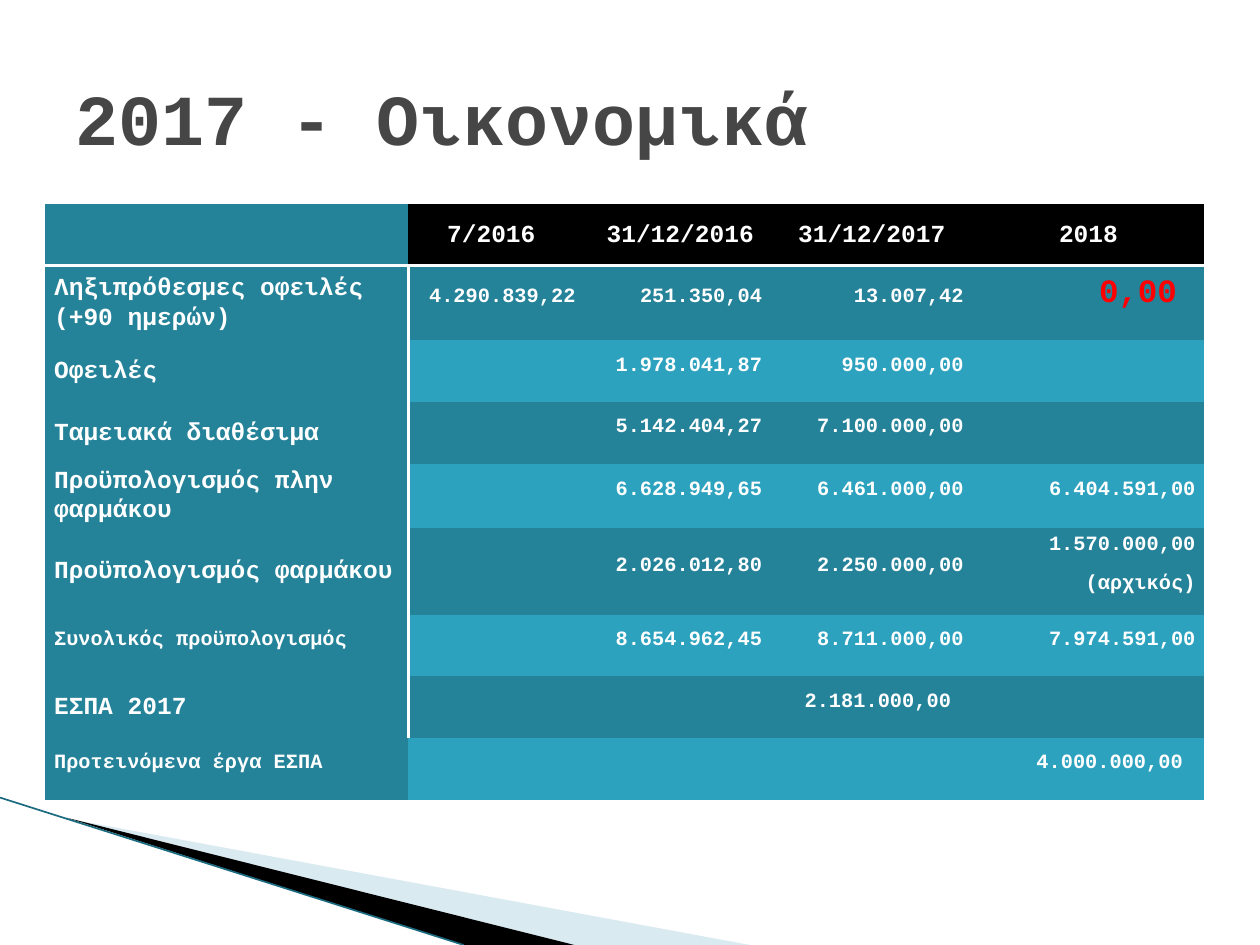
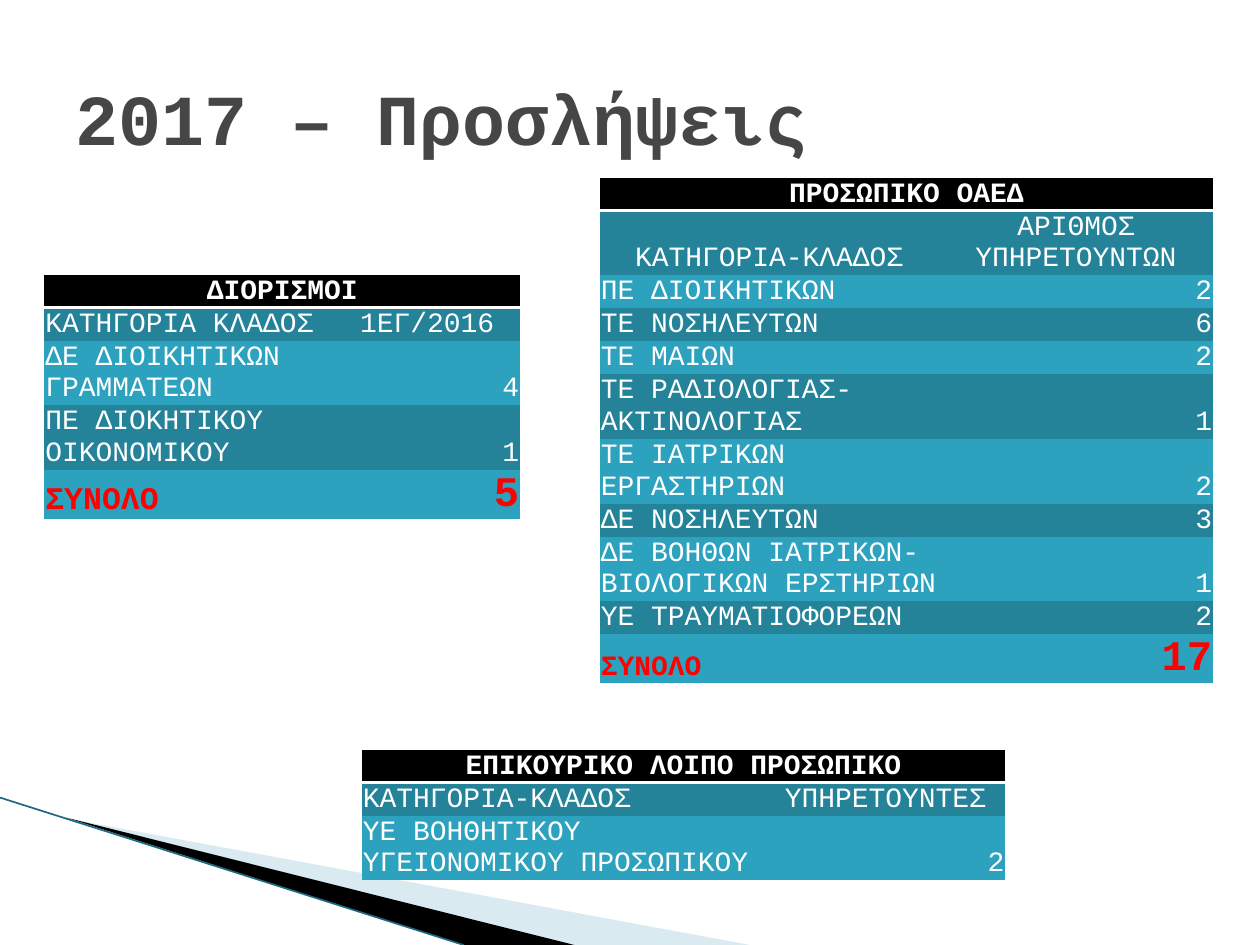
from dataclasses import dataclass

from lxml.etree import SubElement
from pptx import Presentation
from pptx.dml.color import RGBColor
from pptx.enum.text import MSO_ANCHOR as Anchor, MSO_AUTO_SIZE as AutoSize, PP_ALIGN as Align
from pptx.enum.shapes import MSO_CONNECTOR as Connector
from pptx.oxml.ns import qn
from pptx.util import Inches, Pt


@dataclass(frozen=True)
class Theme:
    font: str = "Courier New"
    white: str = "FFFFFF"
    black: str = "000000"
    red: str = "FF0000"
    title: str = "464646"
    dark: str = "248299"
    light: str = "2DA2BF"
    pale: str = "A0CBDC"
    edge: str = "1B6B80"
    title_size: int = 41
    label_size: int = 14
    raised_size: int = 20
    zero_size: int = 32
    staff_size: int = 16
    total_size: int = 24


THEME = Theme()
TITLE_BOX = (0.5, 0.3, 9, 1.25)
NO_GRID_STYLE = "{2D5ABB26-0587-4C30-8999-92F81FD0307C}"

FINANCE_HEADS = ["7/2016", "31/12/2016", "31/12/2017", "2018"]
# label, whether the label is raised, row height, one amount per date
FINANCE_ROWS = [
    ("Ληξιπρόθεσμες οφειλές\n(+90 ημερών)", False, 0.59,
     ["4.290.839,22", "251.350,04", "13.007,42", "0,00"]),
    ("Οφειλές", False, 0.49, ["", "1.978.041,87", "950.000,00", ""]),
    ("Ταμειακά διαθέσιμα", False, 0.49, ["", "5.142.404,27", "7.100.000,00", ""]),
    ("Προϋπολογισμός πλην φαρμάκου", False, 0.51,
     ["", "6.628.949,65", "6.461.000,00", "6.404.591,00"]),
    ("Προϋπολογισμός φαρμάκου", False, 0.69,
     ["", "2.026.012,80", "2.250.000,00", "1.570.000,00\n(αρχικός)"]),
    ("Συνολικός προϋπολογισμός", True, 0.49,
     ["", "8.654.962,45", "8.711.000,00", "7.974.591,00"]),
    ("ΕΣΠΑ 2017", False, 0.49, ["", "", "2.181.000,00", ""]),
    ("Προτεινόμενα έργα ΕΣΠΑ", True, 0.49, ["", "", "", "4.000.000,00"]),
]
# amounts set slightly in from the right edge, with that margin
INDENTED = {"4.290.839,22": 0.11, "0,00": 0.22, "2.181.000,00": 0.17, "4.000.000,00": 0.17}

# label, count, lines of text
APPOINTMENTS = [
    ("ΔΕ ΔΙΟΙΚΗΤΙΚΩΝ ΓΡΑΜΜΑΤΕΩΝ", "4", 2),
    ("ΠΕ ΔΙΟΚΗΤΙΚΟΥ ΟΙΚΟΝΟΜΙΚΟΥ", "1", 2),
]
AGENCY_STAFF = [
    ("ΠΕ ΔΙΟΙΚΗΤΙΚΩΝ", "2", 1),
    ("ΤΕ ΝΟΣΗΛΕΥΤΩΝ", "6", 1),
    ("ΤΕ ΜΑΙΩΝ", "2", 1),
    ("ΤΕ ΡΑΔΙΟΛΟΓΙΑΣ-ΑΚΤΙΝΟΛΟΓΙΑΣ", "1", 2),
    ("ΤΕ ΙΑΤΡΙΚΩΝ ΕΡΓΑΣΤΗΡΙΩΝ", "2", 2),
    ("ΔΕ ΝΟΣΗΛΕΥΤΩΝ", "3", 1),
    ("ΔΕ ΒΟΗΘΩΝ ΙΑΤΡΙΚΩΝ-ΒΙΟΛΟΓΙΚΩΝ ΕΡΣΤΗΡΙΩΝ", "1", 2),
    ("ΥΕ ΤΡΑΥΜΑΤΙΟΦΟΡΕΩΝ", "2", 1),
]
AUXILIARY_STAFF = [("ΥΕ ΒΟΗΘΗΤΙΚΟΥ ΥΓΕΙΟΝΟΜΙΚΟΥ ΠΡΟΣΩΠΙΚΟΥ", "2", 2)]


def rgb(value):
    return RGBColor.from_string(value)


def write(frame, text, *, size, color=THEME.white, bold=True, align=Align.LEFT,
          spacing=1.0, raised=False):
    """Fill a text frame, one paragraph for each line of the text."""
    for index, line in enumerate(text.split("\n")):
        para = frame.add_paragraph() if index else frame.paragraphs[0]
        para.alignment = align
        para.line_spacing = spacing
        span = para.add_run()
        span.text = line
        span.font.name = THEME.font
        span.font.size = Pt(size)
        span.font.bold = bold
        span.font.color.rgb = rgb(color)
        if raised:
            span.font._element.set("baseline", "30000")


# Tables

def add_plain_table(page, left, top, widths, heights):
    box = page.shapes.add_table(len(heights), len(widths), Inches(left), Inches(top),
                                Inches(sum(widths)), Inches(sum(heights)))
    table = box.table
    table.first_row = table.horz_banding = False
    table._tbl.tblPr.find(qn("a:tableStyleId")).text = NO_GRID_STYLE
    for column, width in zip(table.columns, widths):
        column.width = Inches(width)
    for row, height in zip(table.rows, heights):
        row.height = Inches(height)
    return table


def style_cell(cell, fill, *, sides, top=0, right=None, anchor=Anchor.MIDDLE, border=None):
    """Set fill and margins; border names one white edge, such as lnR or lnB."""
    if border:
        line = SubElement(cell._tc.get_or_add_tcPr(), qn("a:" + border), w=str(Pt(2)))
        SubElement(SubElement(line, qn("a:solidFill")), qn("a:srgbClr"), val=THEME.white)
    cell.fill.solid()
    cell.fill.fore_color.rgb = rgb(fill)
    cell.margin_left = Inches(sides)
    cell.margin_right = Inches(sides if right is None else right)
    cell.margin_top, cell.margin_bottom = Inches(top), 0
    cell.vertical_anchor = anchor


def band(row):
    return THEME.dark if row % 2 else THEME.light


def add_finance_table(page, left, top):
    heights = [0.49] + [height for _, _, height, _ in FINANCE_ROWS]
    table = add_plain_table(page, left, top, [2.88, 1.44, 1.44, 1.6, 1.84], heights)

    # Header
    style_cell(table.cell(0, 0), THEME.dark, sides=0.07, border="lnB")
    for column, head in enumerate(FINANCE_HEADS, 1):
        cell = table.cell(0, column)
        right = 0.13 if column == 1 else 0.07
        style_cell(cell, THEME.black, sides=0.01 if column == 1 else 0.07,
                   right=right, border="lnB")
        write(cell.text_frame, head, size=THEME.label_size, align=Align.CENTER, spacing=1.06)

    # Labels and amounts
    for row, (label, raised, _, amounts) in enumerate(FINANCE_ROWS, 1):
        cell = table.cell(row, 0)
        style_cell(cell, THEME.dark, sides=0.07,
                   border="lnR" if row < len(FINANCE_ROWS) else None)
        write(cell.text_frame, label, spacing=1.06, raised=raised,
              size=THEME.raised_size if raised else THEME.label_size)
        for column, amount in enumerate(amounts, 1):
            cell = table.cell(row, column)
            style_cell(cell, band(row), sides=0.01 if column == 1 else 0.07,
                       right=INDENTED.get(amount))
            if amount:
                zero = amount == "0,00"
                write(cell.text_frame, amount, raised=True, align=Align.RIGHT,
                      size=THEME.zero_size if zero else THEME.raised_size,
                      color=THEME.red if zero else THEME.white,
                      spacing=1.0 if "\n" in amount else 1.06)


def add_staff_table(page, left, top, widths, title, heads, rows, *,
                    head_aligns, head_lines=1, total=None, total_label_size=THEME.staff_size):
    line_heights = {1: 0.26, 2: 0.51}
    heights = [line_heights[lines] for lines in [1, head_lines] + [row[2] for row in rows]]
    if total:
        heights.append(0.39)
    table = add_plain_table(page, left, top, widths, heights)
    margins = dict(sides=0.01, top=0.01, anchor=Anchor.BOTTOM)

    # Title across both columns
    for column in range(2):
        style_cell(table.cell(0, column), THEME.black, border="lnB", **margins)
    table.cell(0, 0).merge(table.cell(0, 1))
    write(table.cell(0, 0).text_frame, title, size=THEME.staff_size, align=Align.CENTER)

    # Column heads, then one row for each category
    body = [(heads, head_aligns)]
    body += [(row[:2], (Align.LEFT, Align.RIGHT)) for row in rows]
    for row, (texts, aligns) in enumerate(body, 1):
        for column, (text, align) in enumerate(zip(texts, aligns)):
            cell = table.cell(row, column)
            style_cell(cell, band(row), **margins)
            write(cell.text_frame, text, size=THEME.staff_size, bold=False, align=align)

    # Total
    if total:
        last = len(heights) - 1
        parts = [("ΣΥΝΟΛΟ", total_label_size, Align.LEFT),
                 (total, THEME.total_size, Align.RIGHT)]
        for column, (text, size, align) in enumerate(parts):
            cell = table.cell(last, column)
            style_cell(cell, band(last), **margins)
            write(cell.text_frame, text, size=size, color=THEME.red, align=align)


# Shared layout

def add_wedge(page, points, fill, opacity=100):
    corners = [(Inches(x), Inches(y)) for x, y in points]
    builder = page.shapes.build_freeform(*corners[0], scale=1.0)
    builder.add_line_segments(corners[1:], close=True)
    wedge = builder.convert_to_shape()
    wedge.shadow.inherit = False
    wedge.fill.solid()
    wedge.fill.fore_color.rgb = rgb(fill)
    wedge.line.fill.background()
    if opacity < 100:
        color = wedge._element.spPr.find(".//" + qn("a:srgbClr"))
        SubElement(color, qn("a:alpha"), val=str(opacity * 1000))
    return wedge


def add_edge(page, start, end):
    edge = page.shapes.add_connector(Connector.STRAIGHT, *map(Inches, start + end))
    edge.line.color.rgb = rgb(THEME.edge)
    edge.line.width = Pt(0.95)
    SubElement(edge._element.spPr, qn("a:effectLst"))
    return edge


def prepare_layout(layout, page):
    """Place the title and move the corner wedges behind everything on the layout."""
    title = next(box for box in layout.placeholders if box.placeholder_format.idx == 0)
    title.left, title.top, title.width, title.height = map(Inches, TITLE_BOX)
    corner = [
        add_wedge(page, [(0.55, 6.5), (5.95, 7.5), (4.56, 7.5)], THEME.pale, opacity=40),
        add_wedge(page, [(0.53, 6.49), (4.56, 7.5), (3.68, 7.5)], THEME.black),
        add_edge(page, (0, 6.33), (3.68, 7.5)),
    ]
    for index, shape in enumerate(corner, 2):
        layout.shapes._spTree.insert(index, shape._element)


def add_page(deck, layout, title):
    page = deck.slides.add_slide(layout)
    frame = page.shapes.title.text_frame
    frame.word_wrap = True
    frame.auto_size = AutoSize.NONE
    frame.vertical_anchor = Anchor.MIDDLE
    write(frame, title, size=THEME.title_size, color=THEME.title)
    return page


def main():
    deck = Presentation()
    deck.slide_width, deck.slide_height = Inches(10), Inches(7.5)
    layout = deck.slide_layouts[5]

    # Finances
    finances = add_page(deck, layout, "2017 - Οικονομικά")
    prepare_layout(layout, finances)
    add_finance_table(finances, 0.36, 1.62)

    # Recruitment
    staff = add_page(deck, layout, "2017 – Προσλήψεις")
    add_staff_table(staff, 0.35, 2.18, [2.3, 1.48], "ΔΙΟΡΙΣΜΟΙ",
                    ["ΚΑΤΗΓΟΡΙΑ ΚΛΑΔΟΣ", "1ΕΓ/2016"], APPOINTMENTS,
                    head_aligns=(Align.LEFT, Align.CENTER), total="5", total_label_size=18)
    add_staff_table(staff, 4.76, 1.41, [2.69, 2.18], "ΠΡΟΣΩΠΙΚΟ ΟΑΕΔ",
                    ["ΚΑΤΗΓΟΡΙΑ-ΚΛΑΔΟΣ", "ΑΡΙΘΜΟΣ ΥΠΗΡΕΤΟΥΝΤΩΝ"], AGENCY_STAFF,
                    head_aligns=(Align.CENTER, Align.CENTER), head_lines=2, total="17")
    add_staff_table(staff, 2.87, 5.95, [3.35, 1.76], "ΕΠΙΚΟΥΡΙΚΟ ΛΟΙΠΟ ΠΡΟΣΩΠΙΚΟ",
                    ["ΚΑΤΗΓΟΡΙΑ-ΚΛΑΔΟΣ", "ΥΠΗΡΕΤΟΥΝΤΕΣ"], AUXILIARY_STAFF,
                    head_aligns=(Align.LEFT, Align.LEFT))
    deck.save("out.pptx")


if __name__ == "__main__":
    main()
